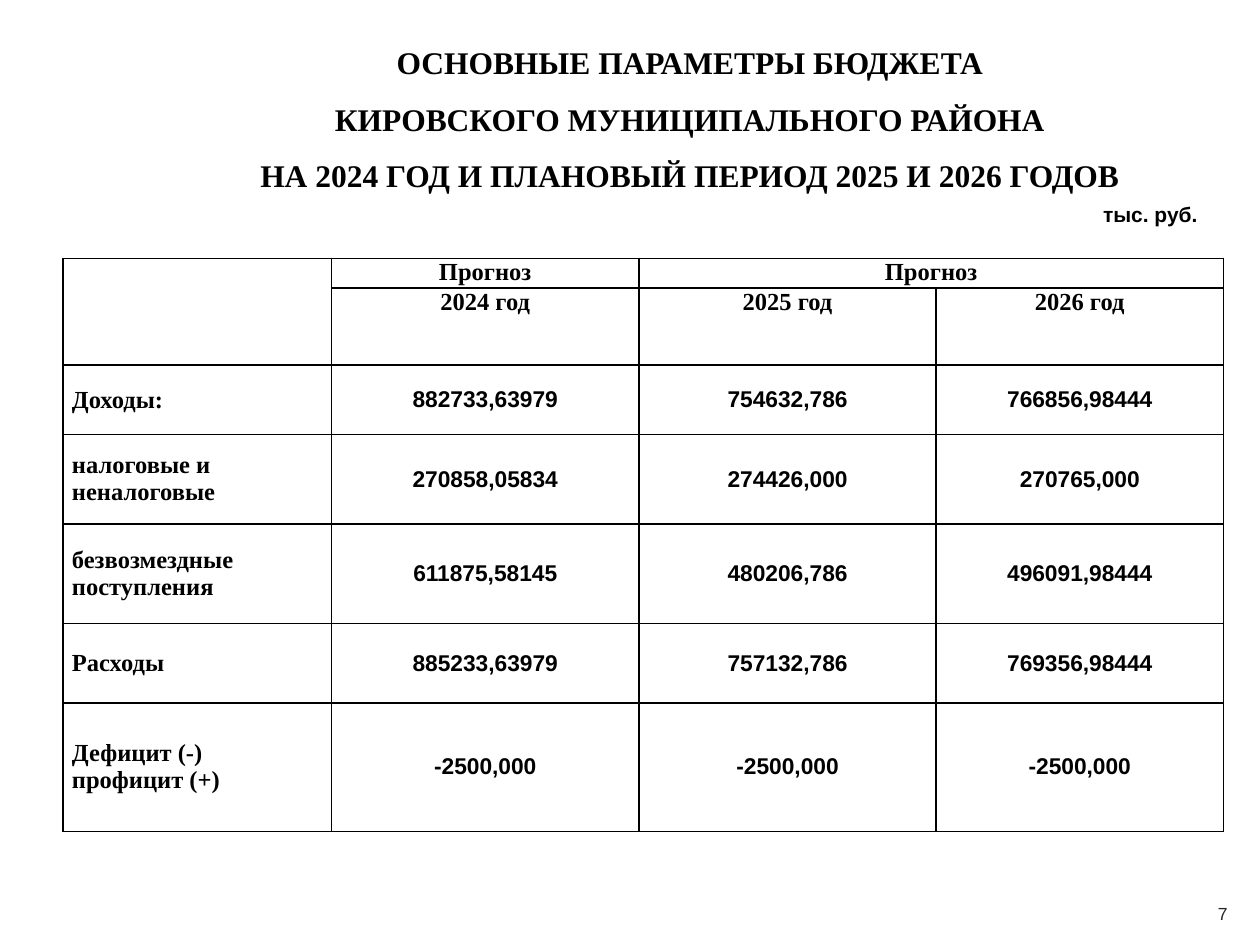
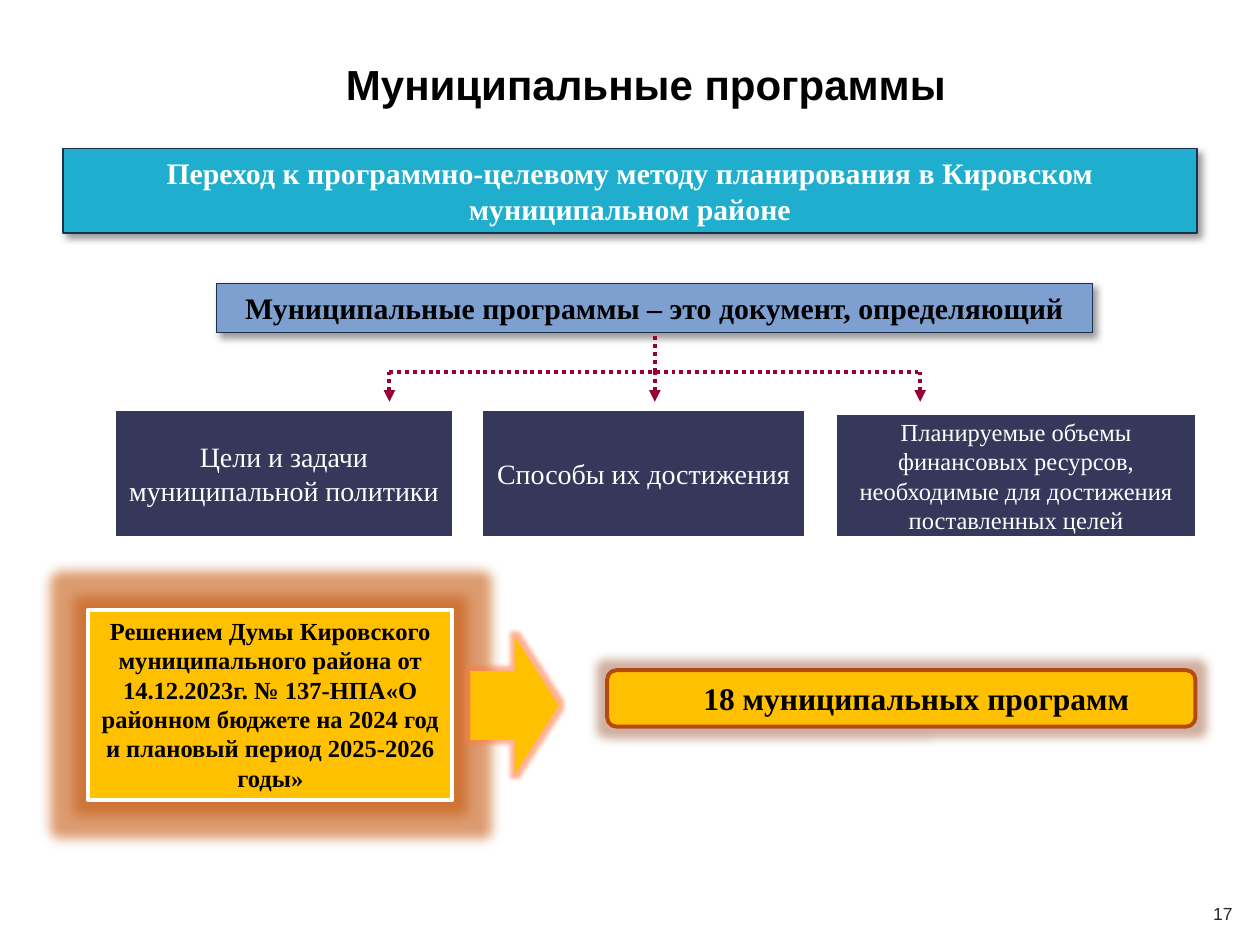
import pptx
import pptx.dml.color
import pptx.enum.dml
import pptx.enum.shapes
import pptx.enum.text
import pptx.oxml
import pptx.oxml.ns
import pptx.util

Cm = pptx.util.Cm
Pt = pptx.util.Pt
Shape = pptx.enum.shapes.MSO_SHAPE
Align = pptx.enum.text.PP_ALIGN
Anchor = pptx.enum.text.MSO_ANCHOR

SERIF, SANS = "Times New Roman", "Arial"
COLORS = {
    "black": "000000", "white": "FFFFFF", "page number": "262626",
    "banner": "1FAECD", "definition": "7DA0D0", "outline": "1C314E",
    "aspect": "35385A", "arrow": "990033", "gold": "FFC000", "rust": "B54A10",
    "decision glow": "C55A11", "arrow glow": "FF7F45", "count glow": "8B3A12",
}

BUDGET_TITLE = [
    "ОСНОВНЫЕ ПАРАМЕТРЫ БЮДЖЕТА",
    "КИРОВСКОГО МУНИЦИПАЛЬНОГО РАЙОНА",
    "НА 2024 ГОД И ПЛАНОВЫЙ ПЕРИОД 2025 И 2026 ГОДОВ",
]
BUDGET_UNIT = "тыс. руб."
BUDGET_ROWS = [
    ["", "Прогноз", "Прогноз", ""],
    ["", "2024 год", "2025 год", "2026 год"],
    ["Доходы:", "882733,63979", "754632,786", "766856,98444"],
    ["налоговые и неналоговые", "270858,05834", "274426,000", "270765,000"],
    ["безвозмездные поступления", "611875,58145", "480206,786", "496091,98444"],
    ["Расходы", "885233,63979", "757132,786", "769356,98444"],
    ["Дефицит (-)\nпрофицит (+)", "-2500,000", "-2500,000", "-2500,000"],
]
HEADER_ROWS = 2
COLUMN_WIDTHS = [5.41, 6.2, 5.99, 5.79]
ROW_HEIGHTS = [0.6, 1.55, 1.4, 1.8, 2.01, 1.6, 2.59]

PROGRAMS_TITLE = "Муниципальные программы"
BANNER = "Переход к программно-целевому методу планирования в Кировском муниципальном районе"
DEFINITION = "Муниципальные программы – это документ, определяющий"
# text, left, top, width, height, font size
ASPECTS = [
    ("Цели и задачи муниципальной политики", 2.31, 8.25, 6.83, 2.59, 16),
    ("Способы их достижения", 9.7, 8.25, 6.55, 2.59, 16),
    ("Планируемые объемы финансовых ресурсов, необходимые для достижения "
     "поставленных целей", 16.84, 8.34, 7.29, 2.5, 14),
]
DECISION = ("Решением Думы Кировского муниципального района от 14.12.2023г. "
            "№ 137-НПА«О районном бюджете на 2024 год и плановый период 2025-2026 годы»")
PROGRAM_COUNT = "18 муниципальных программ"

BRANCH_XS = [7.85, 13.2, 18.55]
BRANCH_TOP, BRANCH_MIDDLE, BRANCH_TIP = 6.71, 7.49, 8.1


def rgb(name):
    return pptx.dml.color.RGBColor.from_string(COLORS[name])


def element(markup):
    """Parse a fragment whose root tag belongs to the drawing namespace."""
    tag_end = min(markup.index(mark) for mark in " />" if mark in markup)
    namespace = " " + pptx.oxml.ns.nsdecls("a")
    return pptx.oxml.parse_xml(markup[:tag_end] + namespace + markup[tag_end:])


def write_text(frame, text, *, size, font=SERIF, color="black", bold=False,
               align=Align.CENTER, spacing=None):
    for index, line in enumerate(text.split("\n")):
        paragraph = frame.paragraphs[0] if index == 0 else frame.add_paragraph()
        paragraph.alignment = align
        if spacing:
            paragraph.line_spacing = spacing
        run = paragraph.add_run()
        run.text = line
        run.font.size, run.font.name, run.font.bold = Pt(size), font, bold
        run.font.color.rgb = rgb(color)


def add_text(slide, text, box, *, wrap=True, anchor=Anchor.TOP, **text_format):
    frame = slide.shapes.add_textbox(*map(Cm, box)).text_frame
    frame.word_wrap = wrap
    frame.vertical_anchor = anchor
    write_text(frame, text, **text_format)


def add_block(slide, box, fill, *, text="", kind=Shape.RECTANGLE, line=None,
              line_width=0.75, effect=None, anchor=Anchor.TOP, left_inset=0.25,
              **text_format):
    shape = slide.shapes.add_shape(kind, *map(Cm, box))
    shape.fill.solid()
    shape.fill.fore_color.rgb = rgb(fill)
    if line:
        shape.line.color.rgb = rgb(line)
        shape.line.width = Pt(line_width)
    else:
        shape.line.fill.background()
    shape.shadow.inherit = False
    if effect is not None:
        shape.element.spPr.find(pptx.oxml.ns.qn("a:effectLst")).append(effect)
    frame = shape.text_frame
    frame.word_wrap = True
    frame.vertical_anchor = anchor
    frame.margin_left = Cm(left_inset)
    if text:
        write_text(frame, text, **text_format)
    return shape


def color_markup(color, opacity):
    return f'<a:srgbClr val="{COLORS[color]}"><a:alpha val="{opacity * 1000}"/></a:srgbClr>'


def drop_shadow():
    return element(f'<a:outerShdw blurRad="{Pt(4)}" dist="{Pt(3)}" dir="2700000" algn="tl" '
                   f'rotWithShape="0">{color_markup("black", 40)}</a:outerShdw>')


def glow(color, radius, opacity):
    return element(f'<a:glow rad="{Pt(radius)}">{color_markup(color, opacity)}</a:glow>')


def add_dotted_line(slide, start, end, arrow=False):
    connector = slide.shapes.add_connector(
        pptx.enum.shapes.MSO_CONNECTOR.STRAIGHT, *map(Cm, start + end))
    connector.line.color.rgb = rgb("arrow")
    connector.line.width = Pt(2.25)
    connector.line.dash_style = pptx.enum.dml.MSO_LINE.ROUND_DOT
    if arrow:
        connector.line._get_or_add_ln().append(element('<a:tailEnd type="triangle"/>'))
    connector.element.spPr.append(element("<a:effectLst/>"))


def format_cell(cell):
    """Clear the fill, draw thin black borders and tighten the margins."""
    properties = cell._tc.get_or_add_tcPr()
    for side in "LRTB":
        properties.append(element(
            f'<a:ln{side} w="{Pt(1)}"><a:solidFill><a:srgbClr val="{COLORS["black"]}"/>'
            f'</a:solidFill></a:ln{side}>'))
    cell.fill.background()
    cell.margin_left = cell.margin_right = Cm(0.18)
    cell.margin_top = cell.margin_bottom = 0


def add_budget_table(slide):
    table = slide.shapes.add_table(
        len(ROW_HEIGHTS), len(COLUMN_WIDTHS), Cm(1.27), Cm(5.21),
        Cm(sum(COLUMN_WIDTHS)), Cm(sum(ROW_HEIGHTS))).table
    table.first_row = table.horz_banding = False
    for column, width in zip(table.columns, COLUMN_WIDTHS):
        column.width = Cm(width)
    for row, height in zip(table.rows, ROW_HEIGHTS):
        row.height = Cm(height)
    for row_index, texts in enumerate(BUDGET_ROWS):
        is_header = row_index < HEADER_ROWS
        for column_index, text in enumerate(texts):
            cell = table.cell(row_index, column_index)
            format_cell(cell)
            cell.vertical_anchor = Anchor.TOP if is_header else Anchor.MIDDLE
            is_label = column_index == 0
            is_value = not is_header and not is_label
            write_text(cell.text_frame, text, bold=True,
                       size=13 if is_value else 14,
                       font=SANS if is_value else SERIF,
                       align=Align.LEFT if is_label else Align.CENTER)
    table.cell(0, 0).merge(table.cell(1, 0))
    table.cell(0, 2).merge(table.cell(0, 3))


def add_slide(presentation, number):
    slide = presentation.slides.add_slide(presentation.slide_layouts[6])
    add_text(slide, str(number), (24, 17.91, 1.3, 1.02), anchor=Anchor.MIDDLE,
             size=10, font=SANS, color="page number")
    return slide


def build_budget_slide(presentation):
    slide = add_slide(presentation, 7)
    add_text(slide, "\n".join(BUDGET_TITLE), (3.23, 0.36, 21.36, 3.71),
             size=18, bold=True, spacing=1.5)
    add_text(slide, BUDGET_UNIT, (21.97, 3.94, 2.44, 0.76), wrap=False,
             size=12, font=SANS, bold=True)
    add_budget_table(slide)


def build_programs_slide(presentation):
    slide = add_slide(presentation, 17)
    add_text(slide, PROGRAMS_TITLE, (1.27, 0.46, 23.5, 2.46), anchor=Anchor.MIDDLE,
             size=24, font=SANS, bold=True)
    add_block(slide, (1.27, 3, 22.86, 1.7), "banner", text=BANNER, line="outline",
              effect=drop_shadow(), size=17, color="white", bold=True)
    add_block(slide, (4.37, 5.72, 17.65, 0.99), "definition", text=DEFINITION,
              line="outline", effect=drop_shadow(), size=17, bold=True)

    add_dotted_line(slide, (BRANCH_XS[0], BRANCH_MIDDLE), (BRANCH_XS[-1], BRANCH_MIDDLE))
    add_dotted_line(slide, (BRANCH_XS[1], BRANCH_MIDDLE), (BRANCH_XS[1], BRANCH_TOP))
    for x in BRANCH_XS:
        add_dotted_line(slide, (x, BRANCH_MIDDLE), (x, BRANCH_TIP), arrow=True)

    for text, *box, size in ASPECTS:
        add_block(slide, box, "aspect", text=text, line="white", line_width=2,
                  anchor=Anchor.MIDDLE, size=size, color="white")

    add_block(slide, (1.78, 12.29, 7.34, 3.84), "gold", text=DECISION, line="white",
              line_width=2.25, effect=glow("decision glow", 14, 60), size=14, bold=True)
    arrow = add_block(slide, (8.99, 13.33, 2.77, 1.78), "gold", kind=Shape.DOWN_ARROW,
                      effect=glow("arrow glow", 5, 60))
    arrow.rotation = 270
    add_block(slide, (12.24, 13.51, 11.86, 1.14), "gold", text=PROGRAM_COUNT,
              kind=Shape.ROUNDED_RECTANGLE, line="rust", line_width=2.25,
              effect=glow("count glow", 11, 40), left_inset=0.86, size=18, bold=True)


def main():
    presentation = pptx.Presentation()
    presentation.slide_width, presentation.slide_height = Cm(25.4), Cm(19.05)
    build_budget_slide(presentation)
    build_programs_slide(presentation)
    presentation.save("out.pptx")


if __name__ == "__main__":
    main()
